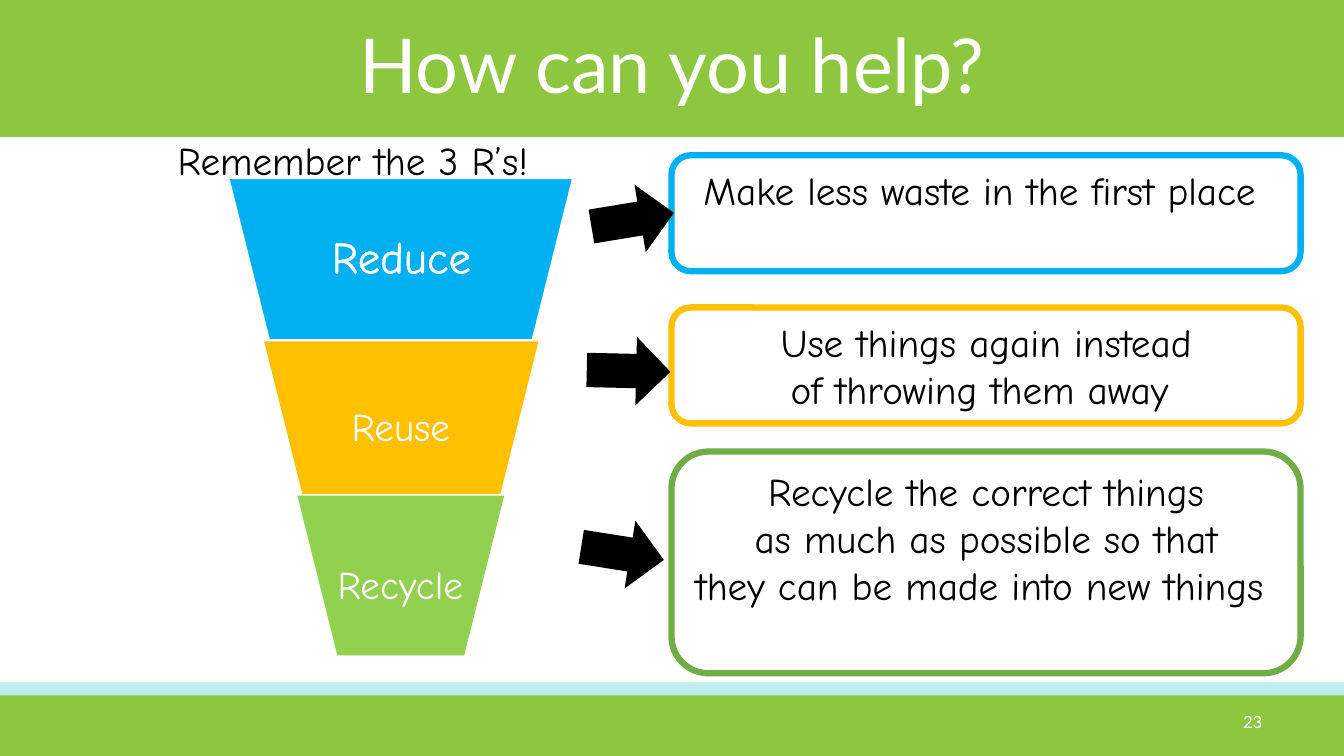
from dataclasses import dataclass

from lxml.etree import SubElement
from pptx import Presentation
from pptx.dml.color import RGBColor
from pptx.enum.shapes import MSO_SHAPE as Shape
from pptx.enum.text import MSO_ANCHOR as Anchor, PP_ALIGN as Align
from pptx.oxml import parse_xml
from pptx.oxml.ns import nsdecls, qn
from pptx.util import Inches, Pt

GREEN, WHITE, BLACK = "8DC63F", "FFFFFF", "000000"
HAND, SANS = "Comic Neue", "Lato"
TIE, HARD_SPACE = "~", chr(160)

Box = tuple[float, float, float, float]


@dataclass
class Step:
    name: str
    color: str
    size: int
    funnel: Box
    label: Box
    advice: str
    border: str
    card: Box
    arrow: tuple[float, float, float]


STEPS = [
    Step("Reduce", "00B0F0", 32, (2.27, 1.77, 3.41, 1.6), (2.87, 1.77, 2.22, 1.6),
         "Make less waste in the first place ",
         "00B0F0", (6.66, 1.54, 6.24, 1.15), (5.86, 1.84, 350.6)),
    Step("Reuse", "FFC000", 28, (2.61, 3.38, 2.74, 1.53), (3.34, 3.6, 1.27, 1.31),
         "Use things again instead of~throwing them away~",
         "FFC000", (6.66, 3.05, 6.24, 1.15), (5.82, 3.34, 1.3)),
    Step("Recycle", "92D050", 28, (2.94, 4.91, 2.07, 1.6), (3.2, 5.12, 1.54, 1.4),
         "Recycle the correct things as~much as~possible so that "
         "they~can be made into new things~",
         "70AD47", (6.66, 4.48, 6.24, 2.2), (5.76, 5.15, 9)),
]


def rgb(color: str) -> RGBColor:
    return RGBColor.from_string(color)


def set_attrs(obj, values: dict) -> None:
    for name, value in values.items():
        setattr(obj, name, value)


def write(sp, text: str, size: float, color: str, font: str = HAND,
          align=Align.CENTER, anchor=Anchor.TOP, inset: float | None = None,
          **spacing):
    tf = sp.text_frame
    set_attrs(tf, {"word_wrap": True, "vertical_anchor": anchor})
    if inset is not None:
        sides = ("left", "top", "right", "bottom")
        set_attrs(tf, {f"margin_{side}": Inches(inset) for side in sides})
    p = tf.paragraphs[0]
    set_attrs(p, {"alignment": align, **spacing})
    r = p.add_run()
    r.text = text.replace(TIE, HARD_SPACE)
    set_attrs(r.font, {"size": Pt(size), "name": font})
    r.font.color.rgb = rgb(color)
    return r


def add_text(s, box: Box, text: str, size: float, color: str, **fmt):
    sp = s.shapes.add_textbox(*map(Inches, box))
    return write(sp, text, size, color, **fmt)


def add_shape(s, kind, box: Box, fill: str | None = None, line: str | None = None,
              width: float = 1, rotation: float = 0):
    sp = s.shapes.add_shape(kind, *map(Inches, box))
    sp.shadow.inherit = False
    sp.rotation = rotation
    if fill:
        sp.fill.solid()
        sp.fill.fore_color.rgb = rgb(fill)
    else:
        sp.fill.background()
    if line:
        sp.line.color.rgb = rgb(line)
        sp.line.width = Pt(width)
    else:
        sp.line.fill.background()
    return sp


def set_alpha(sp, percent: int) -> None:
    color = sp.fill._xPr.find(qn("a:solidFill"))[0]
    SubElement(color, qn("a:alpha")).set("val", str(percent * 1000))


def outline_text(r, color: str, width: float) -> None:
    r.font._element.insert(0, parse_xml(
        f'<a:ln {nsdecls("a")} w="{Pt(width)}"><a:solidFill>'
        f'<a:srgbClr val="{color}"/></a:solidFill></a:ln>'))


def add_frame(s) -> None:
    band = add_shape(s, Shape.RECTANGLE, (0, 6.77, 13.33, 0.24), "20BFD0")
    set_alpha(band, 29)
    header = (0, 0, 13.33, 1.36)
    for box in (header, (0, 6.9, 13.33, 0.63)):
        add_shape(s, Shape.RECTANGLE, box, GREEN)
    add_text(s, header, "How can you help?", 54, WHITE, font=SANS,
             anchor=Anchor.MIDDLE, line_spacing=0.9)
    add_text(s, (-2.17, 1.36, 11.34, 0.64), "Remember the 3 R’s!", 28, BLACK,
             line_spacing=0.9, space_before=Pt(10))
    add_text(s, (9.62, 6.96, 3, 0.4), "23", 12, WHITE, font=SANS,
             align=Align.RIGHT, anchor=Anchor.MIDDLE)


def add_step(s, step: Step) -> None:
    add_shape(s, Shape.TRAPEZOID, step.funnel, step.color, WHITE, rotation=180)
    r = add_text(s, step.label, step.name, step.size, WHITE, anchor=Anchor.MIDDLE,
                 inset=0.04, line_spacing=0.9)
    if step.name == "Reduce":
        outline_text(r, WHITE, 0.75)
    card = add_shape(s, Shape.ROUNDED_RECTANGLE, step.card, line=step.border, width=4.5)
    write(card, step.advice, 28, BLACK)
    left, top, angle = step.arrow
    add_shape(s, Shape.RIGHT_ARROW, (left, top, 0.83, 0.68), BLACK, rotation=angle)


def main() -> None:
    prs = Presentation()
    set_attrs(prs, {"slide_width": Inches(13.33), "slide_height": Inches(7.5)})
    s = prs.slides.add_slide(prs.slide_layouts[6])
    add_frame(s)
    for step in STEPS:
        add_step(s, step)
    prs.save("out.pptx")


if __name__ == "__main__":
    main()
